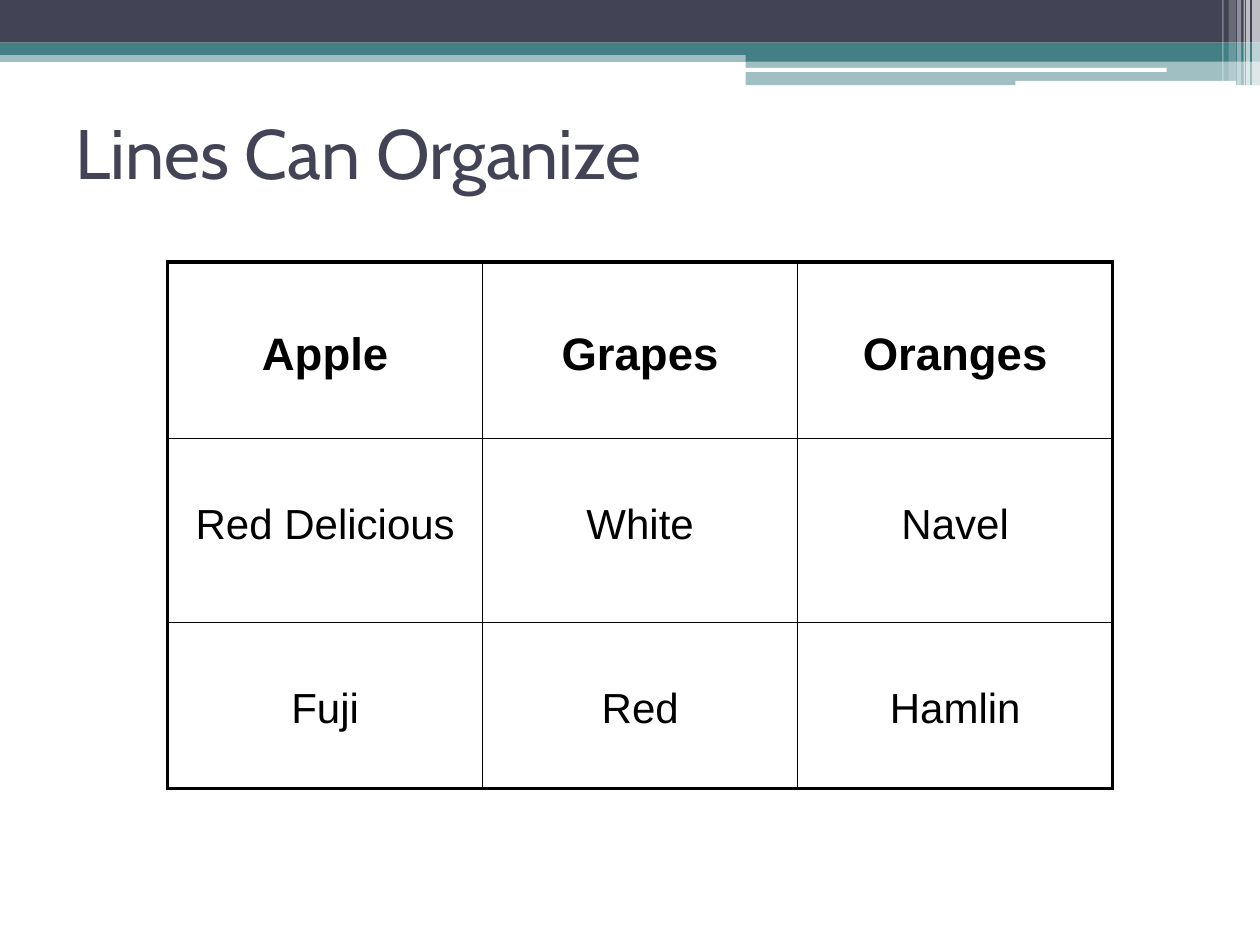
from lxml.etree import SubElement
from pptx import Presentation
from pptx.dml.color import RGBColor
from pptx.enum.shapes import MSO_SHAPE as Preset
from pptx.enum.text import MSO_ANCHOR as Anchor, PP_ALIGN as Align
from pptx.oxml.ns import qn
from pptx.util import Cm, Pt

NAVY, TEAL, WHITE, BLACK = "424456", "438086", "FFFFFF", "000000"
BAR, ROUNDED = Preset.RECTANGLE, Preset.ROUNDED_RECTANGLE
THICK, THIN = 2.25, 1

BANNER = [
    (BAR, 0, 1.02, 25.4, 0.23, TEAL, 50),
    (BAR, 0, 0, 25.4, 0.86, NAVY, 100),
    (BAR, 0, 0.86, 25.4, 0.25, TEAL, 100),
    (BAR, 15.03, 0.99, 10.37, 0.25, TEAL, 100),
    (BAR, 15.03, 1.22, 10.37, 0.5, TEAL, 50),
    (ROUNDED, 15.01, 1.37, 8.51, 0.08, WHITE, 100),
    (ROUNDED, 20.47, 1.63, 4.45, 0.1, WHITE, 100),
]
STRIPES = [
    (25.24, 0.16, 1.72, 65),
    (25.12, 0.08, 1.72, 65),
    (25.07, 0.03, 1.72, 60),
    (24.94, 0.08, 1.72, 40),
    (24.77, 0.15, 1.63, 20),
    (24.64, 0.03, 1.63, 30),
]
FRUITS = [
    ("Apple", "Grapes", "Oranges"),
    ("Red Delicious", "White", "Navel"),
    ("Fuji", "Red", "Hamlin"),
]
ROW_HEIGHTS = (3.56, 3.71, 3.35)


def rgb(color):
    return RGBColor.from_string(color)


def write(frame, text, font="Arial", size=24, color=BLACK, bold=False,
          align=Align.LEFT):
    frame.word_wrap = True
    paragraph = frame.paragraphs[0]
    paragraph.alignment = align
    run = paragraph.add_run()
    run.text = text
    run.font.name = font
    run.font.size = Pt(size)
    run.font.bold = bold
    run.font.color.rgb = rgb(color)


def add_band(slide, preset, left, top, width, height, color, opacity):
    band = slide.shapes.add_shape(preset, Cm(left), Cm(top), Cm(width), Cm(height))
    band.shadow.inherit = False
    band.line.fill.background()
    band.fill.solid()
    band.fill.fore_color.rgb = rgb(color)
    if opacity < 100:
        tint = band.fill._xPr.find(qn("a:solidFill"))[0]
        SubElement(tint, qn("a:alpha"), val=str(opacity * 1000))


def add_title(slide, text):
    title = slide.shapes.add_textbox(Cm(1.27), Cm(1.47), Cm(22.86), Cm(3.18))
    title.text_frame.vertical_anchor = Anchor.MIDDLE
    write(title.text_frame, text, font="Cabin", size=40, color=NAVY)


def set_borders(cell, **widths):
    properties = cell._tc.get_or_add_tcPr()
    for position, (side, width) in enumerate(widths.items()):
        border = properties.makeelement(qn(f"a:ln{side}"), w=str(Pt(width)))
        fill = SubElement(border, qn("a:solidFill"))
        SubElement(fill, qn("a:srgbClr"), val=BLACK)
        properties.insert(position, border)


def add_fruit_table(slide):
    last_row, last_column = len(FRUITS) - 1, len(FRUITS[0]) - 1
    table = slide.shapes.add_table(
        last_row + 1, last_column + 1,
        Cm(3.38), Cm(5.28), Cm(19.05), Cm(sum(ROW_HEIGHTS))).table
    for column in table.columns:
        column.width = Cm(6.35)
    for r, (names, height) in enumerate(zip(FRUITS, ROW_HEIGHTS)):
        table.rows[r].height = Cm(height)
        header = r == 0
        for c, name in enumerate(names):
            cell = table.cell(r, c)
            cell.fill.background()
            cell.margin_top = Cm(1.36 if header else 1.27)
            write(cell.text_frame, name, size=26 if header else 24,
                  bold=header, align=Align.CENTER)
            set_borders(cell,
                        L=THICK if c == 0 else THIN,
                        R=THICK if c == last_column else THIN,
                        T=THICK if header else THIN,
                        B=THICK if r == last_row else THIN)


def main():
    deck = Presentation()
    deck.slide_width, deck.slide_height = Cm(25.4), Cm(19.05)
    slide = deck.slides.add_slide(deck.slide_layouts[6])
    for band in BANNER:
        add_band(slide, *band)
    for left, width, height, opacity in STRIPES:
        add_band(slide, BAR, left, 0, width, height, WHITE, opacity)
    add_title(slide, "Lines Can Organize")
    add_fruit_table(slide)
    deck.save("out.pptx")


if __name__ == "__main__":
    main()
